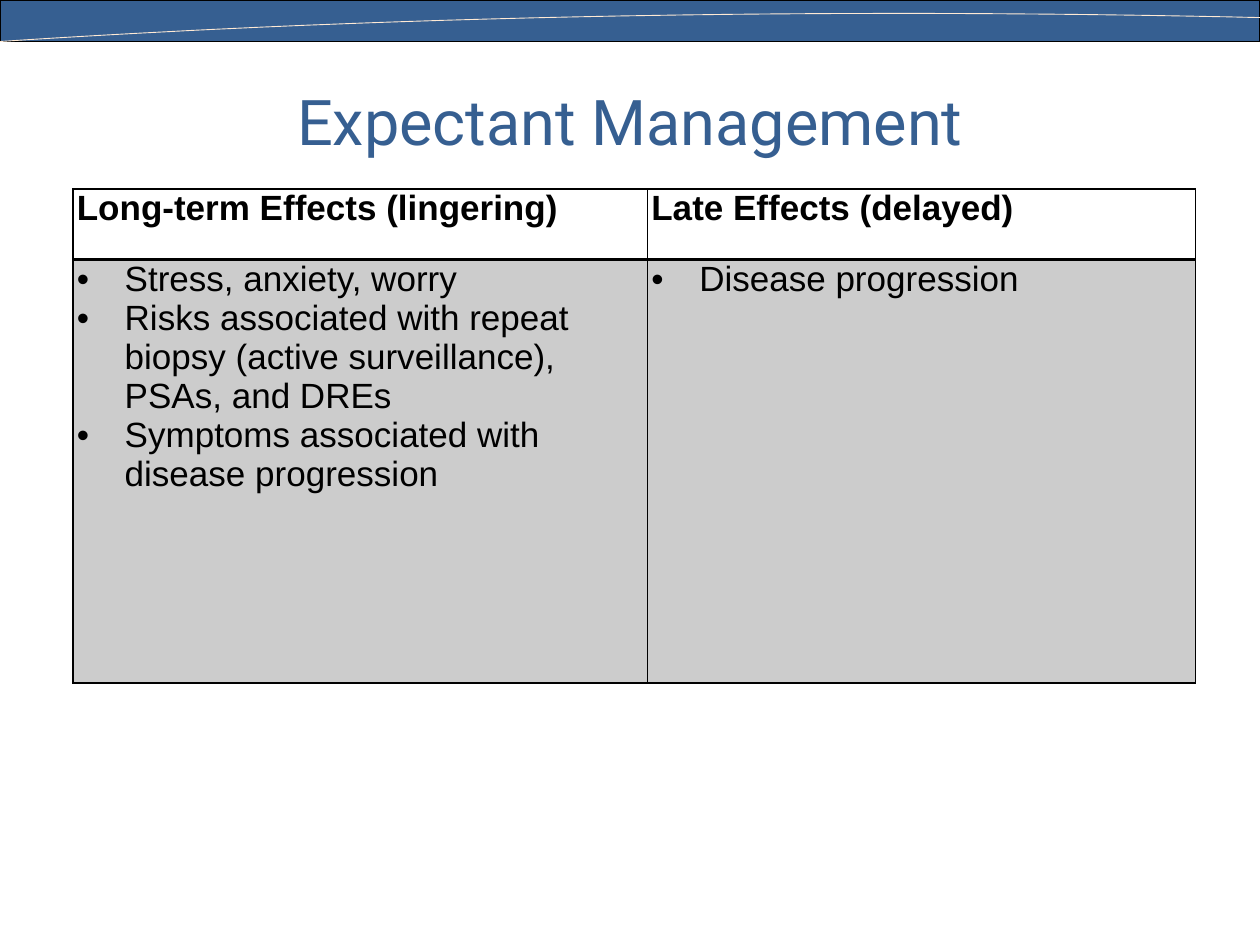
from dataclasses import dataclass

from lxml.etree import SubElement
from pptx import Presentation
from pptx.dml.color import RGBColor
from pptx.enum.text import MSO_ANCHOR, MSO_AUTO_SIZE, PP_ALIGN
from pptx.enum.shapes import MSO_SHAPE
from pptx.oxml.ns import qn
from pptx.util import Inches, Pt


@dataclass(frozen=True)
class Theme:
    blue: str = "365F91"
    cream: str = "FFEAD5"
    black: str = "000000"
    title_font: str = "Roboto"
    body_font: str = "Arial"
    title_size: int = 36
    body_size: int = 20
    shade: int = 20
    indent: float = 0.38


def apply(target, values):
    for name, value in values.items():
        setattr(target, name, value)


def bezier(points, steps=60):
    for i in range(steps + 1):
        t = i / steps
        weights = ((1 - t) ** 3, 3 * t * (1 - t) ** 2, 3 * t ** 2 * (1 - t), t ** 3)
        yield tuple(sum(w * pt[axis] for w, pt in zip(weights, points)) for axis in (0, 1))


class Deck:
    def __init__(self, prs, theme):
        self.prs, self.theme = prs, theme
        self.s = prs.slides.add_slide(prs.slide_layouts[5])

    def x(self, share):
        return int(self.prs.slide_width * share)

    def y(self, share):
        return int(self.prs.slide_height * share)

    def box(self, left, top, width, height):
        return self.x(left), self.y(top), self.x(width), self.y(height)

    def font(self, font, name, size, color, bold=False):
        apply(font, {"name": name, "size": Pt(size), "bold": bold})
        font.color.rgb = RGBColor.from_string(color)

    def outline(self, sp, color, width):
        sp.shadow.inherit = False
        sp.line.color.rgb = RGBColor.from_string(color)
        sp.line.width = Pt(width)

    def band(self, *share):
        sp = self.s.shapes.add_shape(MSO_SHAPE.RECTANGLE, *self.box(*share))
        sp.fill.solid()
        sp.fill.fore_color.rgb = RGBColor.from_string(self.theme.blue)
        self.outline(sp, self.theme.black, 0.75)

    def curve(self, controls):
        points = [(self.x(x), self.y(y)) for x, y in bezier(controls)]
        builder = self.s.shapes.build_freeform(*points[0])
        builder.add_line_segments(points[1:], close=False)
        sp = builder.convert_to_shape()
        sp.fill.background()
        self.outline(sp, self.theme.cream, 0.5)

    def title(self, text, *share):
        sp = self.s.shapes.title
        apply(sp, dict(zip(("left", "top", "width", "height"), self.box(*share))))
        tf = sp.text_frame
        tf.text = text
        apply(tf, {"vertical_anchor": MSO_ANCHOR.MIDDLE, "word_wrap": True,
                   "auto_size": MSO_AUTO_SIZE.NONE})
        p = tf.paragraphs[0]
        p.alignment = PP_ALIGN.CENTER
        self.font(p.runs[0].font, self.theme.title_font, self.theme.title_size, self.theme.blue)

    def bullet(self, p):
        pPr = p._p.get_or_add_pPr()
        indent = Inches(self.theme.indent)
        pPr.set("marL", str(indent))
        pPr.set("indent", str(-indent))
        SubElement(pPr, qn("a:buFont"), typeface=self.theme.body_font)
        SubElement(pPr, qn("a:buChar"), char="•")

    def borders(self, cell, widths):
        tcPr = cell._tc.get_or_add_tcPr()
        for i, (side, width) in enumerate(widths.items()):
            ln = SubElement(tcPr, qn(f"a:ln{side}"), w=str(Pt(width)))
            fill = SubElement(ln, qn("a:solidFill"))
            SubElement(fill, qn("a:srgbClr"), val=self.theme.black)
            tcPr.insert(i, ln)

    def shade(self, cell):
        cell.fill.solid()
        cell.fill.fore_color.rgb = RGBColor.from_string(self.theme.black)
        color = cell._tc.tcPr.find(f"{qn('a:solidFill')}/{qn('a:srgbClr')}")
        SubElement(color, qn("a:alpha"), val=str(self.theme.shade * 1000))

    def cell(self, cell, lines, header):
        apply(cell, {"margin_left": Inches(0.03), "margin_right": Inches(0.03),
                     "margin_top": 0, "margin_bottom": 0})
        tf = cell.text_frame
        tf.text = "\n".join(lines)
        for p in tf.paragraphs:
            if not header:
                self.bullet(p)
            self.font(p.runs[0].font, self.theme.body_font, self.theme.body_size,
                      self.theme.black, header)
        if header:
            cell.fill.background()
        else:
            self.shade(cell)
        self.borders(cell, {"L": 1, "R": 1, "T": 1 if header else 2, "B": 2 if header else 1})

    def table(self, left, top, cols, rows, content):
        frame = self.s.shapes.add_table(len(rows), len(cols),
                                        *self.box(left, top, sum(cols), sum(rows)))
        table = frame.table
        apply(table, {"first_row": False, "horz_banding": False})
        for col, share in zip(table.columns, cols):
            col.width = self.x(share)
        for row, share in zip(table.rows, rows):
            row.height = self.y(share)
        for r, row in enumerate(content):
            for c, lines in enumerate(row):
                self.cell(table.cell(r, c), lines, header=r == 0)


def main():
    prs = Presentation()
    apply(prs, {"slide_width": Inches(10), "slide_height": Inches(7.5)})
    deck = Deck(prs, Theme())
    band = 0.33 / 7.5
    deck.band(0, 0, 1, band)
    deck.curve([(1, 0.14 / 7.5), (0.74, 0.08 / 7.5), (0.38, 0.08 / 7.5), (0, band)])
    deck.title("Expectant Management", 0.05, band, 0.9, 1.25 / 7.5)
    deck.table(0.058, 0.2, (0.456, 0.435), (0.56 / 7.5, 3.36 / 7.5), [
        [["Long-term Effects (lingering)"], ["Late Effects (delayed)"]],
        [["Stress, anxiety, worry",
          "Risks associated with repeat biopsy (active surveillance), PSAs, and DREs",
          "Symptoms associated with disease progression"],
         ["Disease progression"]],
    ])
    prs.save("out.pptx")


if __name__ == "__main__":
    main()
